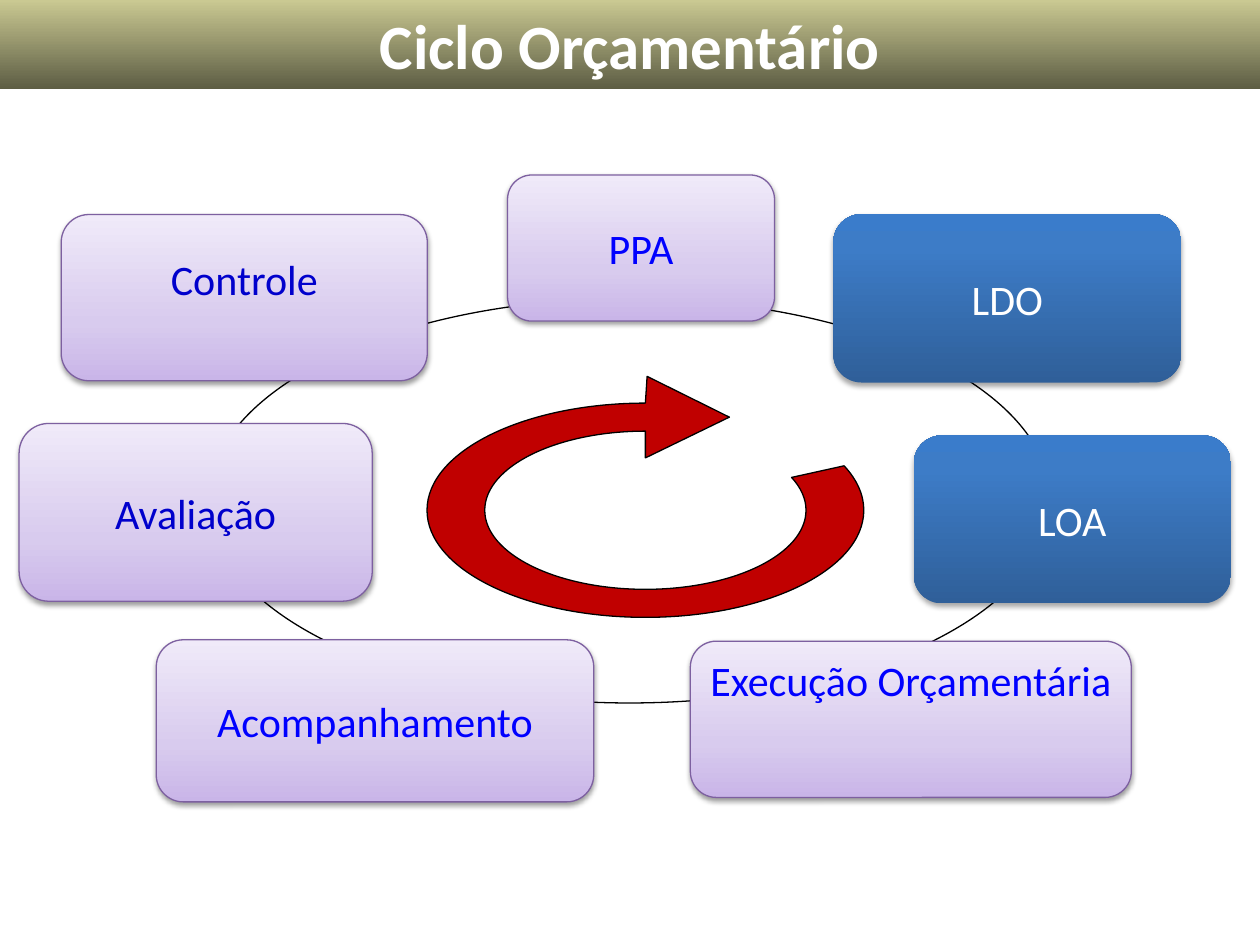
from dataclasses import dataclass
from math import cos, radians, sin, tan

from lxml import etree
from pptx import Presentation
from pptx.dml.color import RGBColor
from pptx.enum.shapes import MSO_SHAPE
from pptx.enum.text import MSO_ANCHOR, MSO_AUTO_SIZE, PP_ALIGN
from pptx.oxml.ns import qn
from pptx.util import Pt

OVAL, ROUNDED = MSO_SHAPE.OVAL, MSO_SHAPE.ROUNDED_RECTANGLE
TOP, MIDDLE = MSO_ANCHOR.TOP, MSO_ANCHOR.MIDDLE
CENTER, NO_AUTOFIT = PP_ALIGN.CENTER, MSO_AUTO_SIZE.NONE
TITLE_ONLY = 5


@dataclass(frozen=True)
class BoxStyle:
    stops: tuple  # position in percent and colour, from bottom to top
    line: str
    shadow: tuple  # opacity in percent, distance in points


@dataclass(frozen=True)
class Theme:
    font: str = "Calibri"
    title_size: int = 36
    box_size: int = 24
    line_width: float = 0.75
    white: str = "FFFFFF"
    black: str = "000000"
    blue: str = "0000FF"
    dark_blue: str = "0000CC"
    arrow: str = "C00000"
    title_stops: tuple = ((0, "5D5D44"), (100, "CAC992"))
    lilac: BoxStyle = BoxStyle(
        ((0, "C9B5E8"), (35, "D8CBEE"), (100, "F0EAF9")), "7D60A0", (38, 1.6))
    solid_blue: BoxStyle = BoxStyle(
        ((0, "2F5F99"), (80, "3D7CC7"), (100, "3A7CCB")), "", (35, 1.8))


THEME = Theme()

# Label, box (left, top, width, height), style, text colour, anchor, bottom inset
STAGES = [
    ("Acompanhamento", (89.3, 365.6, 250, 92.6), THEME.lilac, THEME.blue, MIDDLE, 3.6),
    ("Execução Orçamentária", (394.5, 366.4, 252, 89.3), THEME.lilac, THEME.blue, TOP, 3.6),
    ("LOA", (522.2, 248.8, 181.2, 96), THEME.solid_blue, THEME.white, MIDDLE, 3.6),
    ("LDO", (476.2, 122.4, 198.9, 96.2), THEME.solid_blue, THEME.white, MIDDLE, 3.6),
    ("PPA", (290, 100, 152.6, 83.5), THEME.lilac, THEME.blue, MIDDLE, 3.6),
    ("Controle", (35, 122.6, 209.2, 95), THEME.lilac, THEME.dark_blue, MIDDLE, 25.2),
    ("Avaliação", (10.9, 242, 201.8, 101.6), THEME.lilac, THEME.dark_blue, MIDDLE, 3.6),
]


def color(value):
    return RGBColor.from_string(value)


def place(shape, box):
    shape.left, shape.top, shape.width, shape.height = map(Pt, box)


def fill_gradient(shape, stops):
    """Vertical gradient whose stops run from bottom to top."""
    shape.fill.gradient()
    shape.fill.gradient_angle = 90
    stop_list = shape._element.spPr.find(".//" + qn("a:gsLst"))
    for old_stop in list(stop_list):
        stop_list.remove(old_stop)
    for position, value in stops:
        stop = etree.SubElement(stop_list, qn("a:gs"), pos=str(position * 1000))
        etree.SubElement(stop, qn("a:srgbClr"), val=value)


def set_line(shape, value):
    if value:
        shape.line.color.rgb = color(value)
        shape.line.width = Pt(THEME.line_width)
    else:
        shape.line.fill.background()


def add_shadow(shape, opacity, distance):
    shape.shadow.inherit = False
    effects = shape._element.spPr.find(qn("a:effectLst"))
    shadow = etree.SubElement(
        effects, qn("a:outerShdw"), blurRad=str(Pt(3.1)), dist=str(Pt(distance)),
        dir="5400000", rotWithShape="0")
    shade = etree.SubElement(shadow, qn("a:srgbClr"), val=THEME.black)
    etree.SubElement(shade, qn("a:alpha"), val=str(opacity * 1000))


def set_text(shape, text, size, value, anchor=MIDDLE, bold=False):
    frame = shape.text_frame
    frame.text = text
    frame.word_wrap = True
    frame.auto_size = NO_AUTOFIT
    frame.vertical_anchor = anchor
    paragraph = frame.paragraphs[0]
    paragraph.alignment = CENTER
    font = paragraph.font
    font.name, font.size, font.bold = THEME.font, Pt(size), bold
    font.color.rgb = color(value)


def add_title(slide, box):
    title = slide.shapes.title
    place(title, box)
    fill_gradient(title, THEME.title_stops)
    set_text(title, "Ciclo Orçamentário", THEME.title_size, THEME.white, bold=True)


def add_orbit(slide, box):
    orbit = slide.shapes.add_shape(OVAL, *map(Pt, box))
    orbit.fill.background()
    set_line(orbit, THEME.black)
    orbit.shadow.inherit = False


def add_stage(slide, text, box, style, text_color, anchor, bottom_inset):
    stage = slide.shapes.add_shape(ROUNDED, *map(Pt, box))
    fill_gradient(stage, style.stops)
    set_line(stage, style.line)
    add_shadow(stage, *style.shadow)
    set_text(stage, text, THEME.box_size, text_color, anchor)
    frame = stage.text_frame
    frame.margin_left = frame.margin_right = Pt(2)
    frame.margin_bottom = Pt(bottom_inset)


def curve_segments(shape, lengths):
    """Join runs of three line segments into curves, as lengths tells."""
    outline = shape._element.spPr.find(".//" + qn("a:path"))
    lines = iter(outline.findall(qn("a:lnTo")))
    for length in lengths:
        first = next(lines)
        if length == 3:
            first.tag = qn("a:cubicBezTo")
            for _ in range(2):
                line = next(lines)
                first.append(line[0])
                outline.remove(line)


def add_cycle_arrow(slide, box):
    """Clockwise ring, open at the upper right, with its head at the top."""
    left, top, width, height = box
    center_x, center_y = left + width / 2, top + height / 2
    band_x, band_y, head_length, head_overhang = 33, 16, 48, 15.3
    angles = [-24.5, 0, 90, 180, 270]

    def arc(radius_x, radius_y):
        """Start point, then two control points and an end for each part."""
        def at(angle, pull=0):
            turn = radians(angle)
            return (center_x + radius_x * (cos(turn) - pull * sin(turn)),
                    center_y + radius_y * (sin(turn) + pull * cos(turn)))

        points = [at(angles[0])]
        for start, end in zip(angles, angles[1:]):
            pull = 4 / 3 * tan(radians(end - start) / 4)
            points += [at(start, pull), at(end, -pull), at(end)]
        return points

    outer = arc(width / 2, height / 2)
    inner = arc(width / 2 - band_x, height / 2 - band_y)
    head = [(center_x + 1, top - head_overhang),
            (center_x + head_length, top + band_y / 2),
            (center_x, top + band_y + head_overhang)]
    points = [(Pt(x), Pt(y)) for x, y in outer + head + inner[::-1]]
    builder = slide.shapes.build_freeform(*points[0], scale=1.0)
    builder.add_line_segments(points[1:], close=True)
    arrow = builder.convert_to_shape()
    curves = [3] * (len(angles) - 1)
    curve_segments(arrow, curves + [1] * (len(head) + 1) + curves)
    arrow.fill.solid()
    arrow.fill.fore_color.rgb = color(THEME.arrow)
    set_line(arrow, THEME.black)
    arrow.shadow.inherit = False


def main():
    presentation = Presentation()
    presentation.slide_width, presentation.slide_height = Pt(720), Pt(540)
    slide = presentation.slides.add_slide(presentation.slide_layouts[TITLE_ONLY])
    add_title(slide, (0, 0, 720, 51))
    # Budget cycle: orbit, stages around it, arrow in the middle
    add_orbit(slide, (118.8, 170.6, 481.7, 231.1))
    for stage in STAGES:
        add_stage(slide, *stage)
    add_cycle_arrow(slide, (244, 230.4, 249.6, 122.4))
    presentation.save("out.pptx")


if __name__ == "__main__":
    main()
